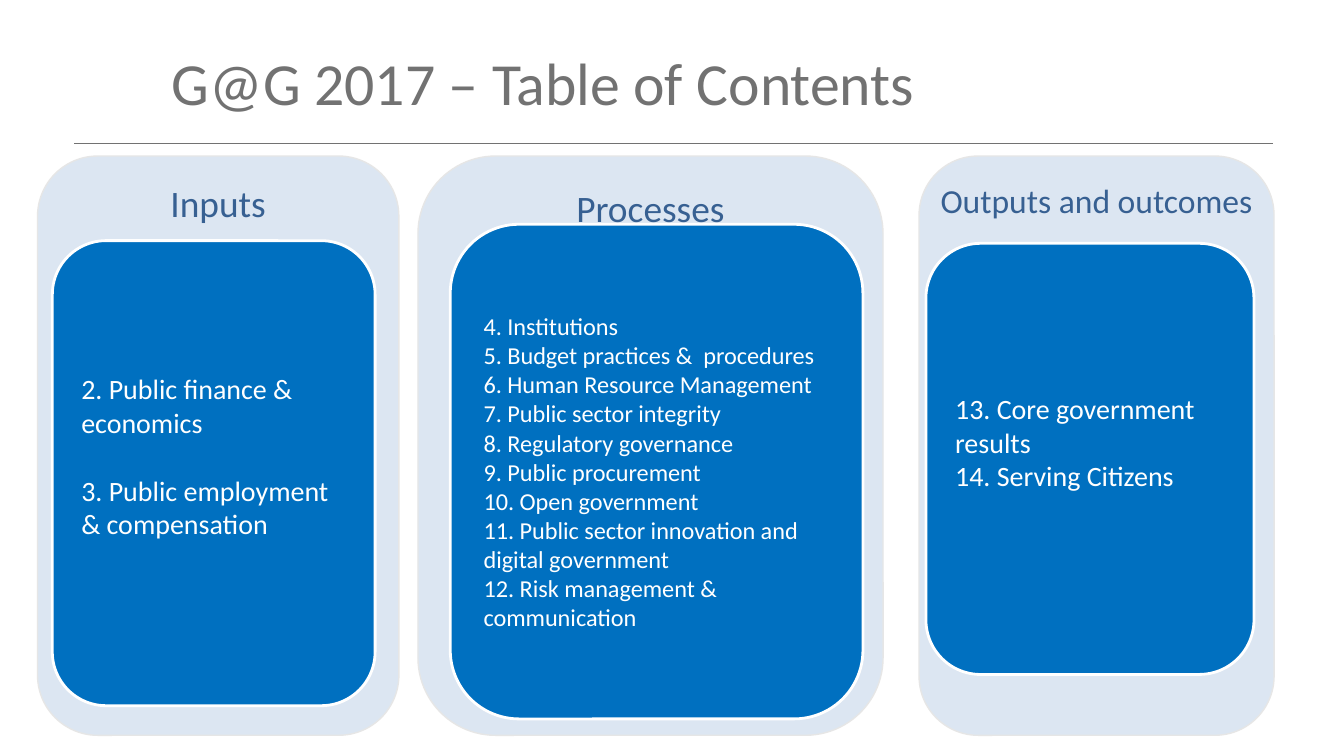
from typing import NamedTuple

from pptx import Presentation, util as u
from pptx.dml.color import RGBColor
from pptx.enum import shapes as es, text as et
from pptx.oxml.ns import qn
from lxml import etree

HUES = {
    "title": "727272", "panel": "DCE6F2", "edge": "E6E6E6",
    "head": "376092", "card": "0070C0", "white": "FFFFFF",
}
FONT = "Calibri"
TOP, TALL = 2.95, 10.95


class Box(NamedTuple):
    left: float
    top: float
    width: float
    height: float


class Stage(NamedTuple):
    head: str
    size: int
    left: float
    width: float
    card: Box
    items: list[str]
    point: int
    gap: float = 0
    foot: float = 0.13


STAGES = [
    Stage("Inputs", 20, 0.71, 6.83, Box(0.99, 4.55, 6.1, 8.79),
          ["2. Public finance & economics",
           "3. Public employment & compensation"], 15, 18.3, 0.77),
    Stage("Processes", 20, 7.9, 8.79, Box(8.51, 4.24, 7.8, 9.35),
          ["4. Institutions",
           "5. Budget practices &  procedures",
           "6. Human Resource Management",
           "7. Public sector integrity",
           "8. Regulatory governance",
           "9. Public procurement",
           "10. Open government",
           "11. Public sector innovation and digital government",
           "12. Risk management & communication"], 13),
    Stage("Outputs and outcomes", 18, 17.37, 6.71, Box(17.5, 4.6, 6.2, 8.15),
          ["13. Core government results",
           "14. Serving Citizens"], 15, 0, 0.77),
]


def hue(name: str) -> RGBColor:
    return RGBColor.from_string(HUES[name])


def write(frame, lines: list[str], size: int, tint: str,
          align=et.PP_ALIGN.LEFT, gap: float = 0) -> None:
    for i, line in enumerate(lines):
        para = frame.add_paragraph() if i else frame.paragraphs[0]
        para.alignment = align
        if i and gap:
            para.space_before = u.Pt(gap)
        run = para.add_run()
        run.text = line
        run.font.name = FONT
        run.font.size = u.Pt(size)
        run.font.color.rgb = hue(tint)


def add_round(slide, box: Box, fill: str, edge: str, width: float):
    shape = slide.shapes.add_shape(
        es.MSO_SHAPE.ROUNDED_RECTANGLE, *map(u.Cm, box))
    shape.shadow.inherit = False
    shape.fill.solid()
    shape.fill.fore_color.rgb = hue(fill)
    shape.line.color.rgb = hue(edge)
    shape.line.width = u.Pt(width)
    return shape


def add_stage(slide, stage: Stage) -> None:
    """Draw a headed panel with its card of chapters on top."""
    panel = add_round(slide, Box(stage.left, TOP, stage.width, TALL),
                      "panel", "edge", 0.75)
    frame = panel.text_frame
    frame.word_wrap = False
    frame.vertical_anchor = et.MSO_ANCHOR.TOP
    write(frame, [stage.head], stage.size, "head", et.PP_ALIGN.CENTER)

    card = add_round(slide, stage.card, "card", "white", 1.5)
    frame = card.text_frame
    frame.word_wrap = True
    frame.vertical_anchor = et.MSO_ANCHOR.MIDDLE
    frame.margin_bottom = u.Cm(stage.foot)
    write(frame, stage.items, stage.point, "white", gap=stage.gap)


def add_title(slide) -> None:
    rule = slide.shapes.add_connector(
        es.MSO_CONNECTOR.STRAIGHT, *map(u.Cm, (1.4, 2.72, 24.05, 2.72)))
    rule.line.color.rgb = hue("title")
    rule.line.width = u.Pt(0.5)
    etree.SubElement(rule._element.spPr, qn("a:effectLst"))

    frame = slide.shapes.add_textbox(
        *map(u.Cm, (3, 0.48, 20.6, 2.13))).text_frame
    frame.word_wrap = True
    frame.vertical_anchor = et.MSO_ANCHOR.MIDDLE
    write(frame, ["G@G 2017 – Table of Contents"], 32, "title")


def main() -> None:
    deck = Presentation()
    deck.slide_width, deck.slide_height = u.Cm(25.4), u.Cm(14.29)
    slide = deck.slides.add_slide(deck.slide_layouts[6])
    add_title(slide)
    for stage in STAGES:
        add_stage(slide, stage)
    deck.save("out.pptx")


if __name__ == "__main__":
    main()
